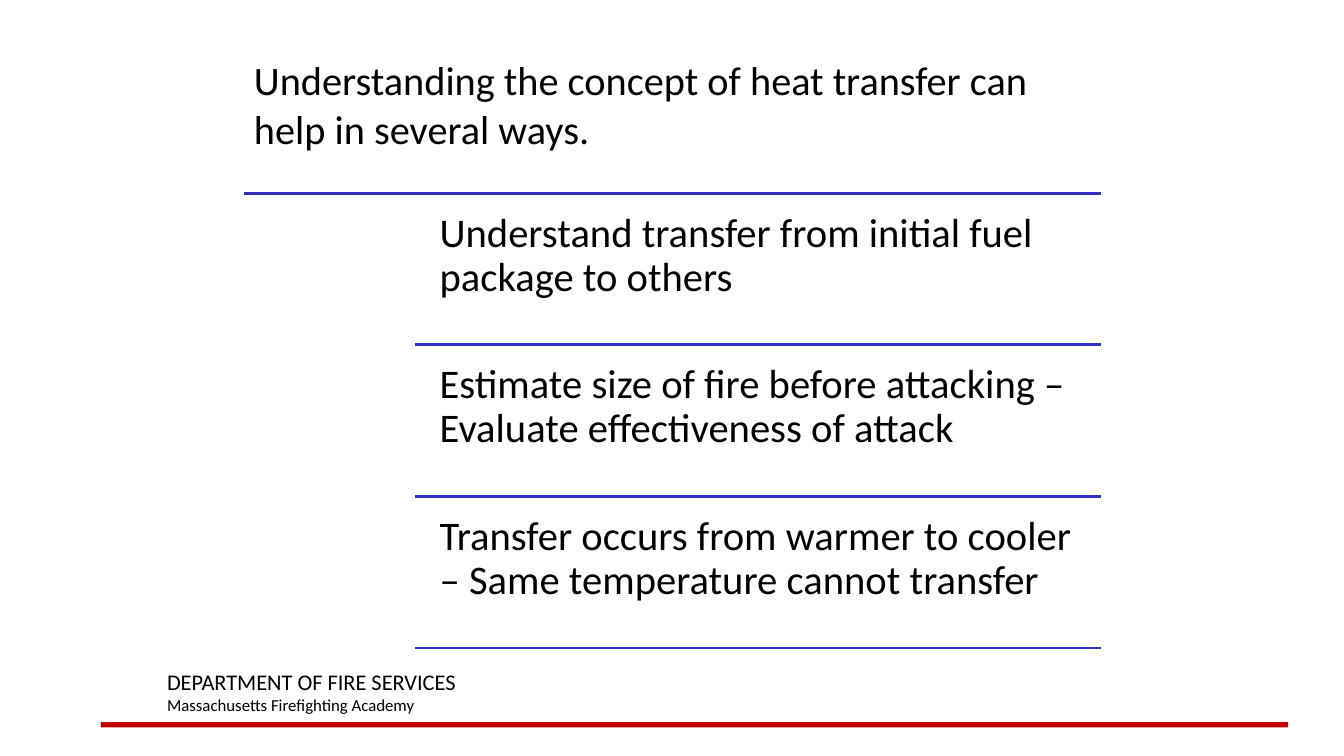
from dataclasses import dataclass

from lxml.etree import SubElement
from pptx import Presentation
from pptx.dml.color import RGBColor
from pptx.enum.shapes import MSO_CONNECTOR as Connector, MSO_SHAPE as Shape
from pptx.enum.text import MSO_ANCHOR as Anchor, PP_ALIGN as Align
from pptx.oxml.ns import qn
from pptx.slide import Slide
from pptx.util import Cm, Pt


@dataclass(frozen=True)
class Theme:
    font: str = "Calibri"
    text: RGBColor = RGBColor(0x00, 0x00, 0x00)
    first_rule: RGBColor = RGBColor(0x2E, 0x2E, 0xB9)
    rule: RGBColor = RGBColor(0x33, 0x33, 0xCC)
    footer_bar: RGBColor = RGBColor(0xC0, 0x00, 0x00)
    rule_width: float = 2
    heading_size: float = 28.8
    benefit_size: float = 29
    department_size: float = 16
    academy_size: float = 12


@dataclass(frozen=True)
class Rule:
    left: float
    color: RGBColor


THEME = Theme()

HEADING = "Understanding the concept of heat transfer can help in several ways."
BENEFITS = (
    "Understand transfer from initial fuel package to others",
    "Estimate size of fire before attacking – Evaluate effectiveness of attack",
    "Transfer occurs from warmer to cooler – Same temperature cannot transfer",
)

# Lengths in centimetres
HEADING_LEFT = 6.15
BENEFIT_LEFT = 10.46
RULE_RIGHT = 27.74
FIRST_RULE_TOP = 4.87
ROW_PITCH = 3.82
TEXT_GAP = 0.18

RULES = (Rule(HEADING_LEFT, THEME.first_rule),) + (
    Rule(BENEFIT_LEFT, THEME.rule),
) * len(BENEFITS)


def add_text(
    slide: Slide,
    lines: list[tuple[str, float]],
    *,
    left: float,
    top: float,
    width: float,
    height: float,
    inset: tuple[float, float] = (0.25, 0.13),
    line_spacing: float = 1.0,
) -> None:
    """Place one paragraph per (wording, point size); inset is (sides, top and bottom)."""
    box = slide.shapes.add_textbox(Cm(left), Cm(top), Cm(width), Cm(height))
    frame = box.text_frame
    frame.word_wrap = True
    frame.vertical_anchor = Anchor.TOP
    frame.margin_left = frame.margin_right = Cm(inset[0])
    frame.margin_top = frame.margin_bottom = Cm(inset[1])
    for index, (wording, size) in enumerate(lines):
        paragraph = frame.add_paragraph() if index else frame.paragraphs[0]
        paragraph.alignment = Align.LEFT
        paragraph.line_spacing = line_spacing
        run = paragraph.add_run()
        run.text = wording
        run.font.name = THEME.font
        run.font.size = Pt(size)
        run.font.color.rgb = THEME.text


def add_rule(slide: Slide, rule: Rule, top: float) -> None:
    line = slide.shapes.add_connector(
        Connector.STRAIGHT, Cm(rule.left), Cm(top), Cm(RULE_RIGHT), Cm(top)
    )
    line.line.color.rgb = rule.color
    line.line.width = Pt(THEME.rule_width)
    SubElement(line._element.spPr, qn("a:effectLst"))


def add_footer(slide: Slide) -> None:
    bar = slide.shapes.add_shape(
        Shape.RECTANGLE, Cm(2.54), Cm(18.2), Cm(29.92), Cm(0.13)
    )
    bar.shadow.inherit = False
    bar.fill.solid()
    bar.fill.fore_color.rgb = THEME.footer_bar
    bar.line.fill.background()
    add_text(
        slide,
        [
            ("DEPARTMENT OF FIRE SERVICES", THEME.department_size),
            ("Massachusetts Firefighting Academy", THEME.academy_size),
        ],
        left=3.96, top=16.71, width=14.4, height=1.45,
    )


def main() -> None:
    deck = Presentation()
    deck.slide_width, deck.slide_height = Cm(33.87), Cm(19.05)
    slide = deck.slides.add_slide(deck.slide_layouts[6])

    add_footer(slide)
    for row, rule in enumerate(RULES):
        add_rule(slide, rule, FIRST_RULE_TOP + row * ROW_PITCH)
    for row, benefit in enumerate(BENEFITS):
        add_text(
            slide,
            [(benefit, THEME.benefit_size)],
            left=10.78,
            top=FIRST_RULE_TOP + row * ROW_PITCH + TEXT_GAP,
            width=16.95,
            height=3.63,
            inset=(0.3, 0.3),
            line_spacing=0.9,
        )
    add_text(
        slide,
        [(HEADING, THEME.heading_size)],
        left=HEADING_LEFT, top=1.27, width=21.8, height=2.54,
    )
    deck.save("out.pptx")


if __name__ == "__main__":
    main()
